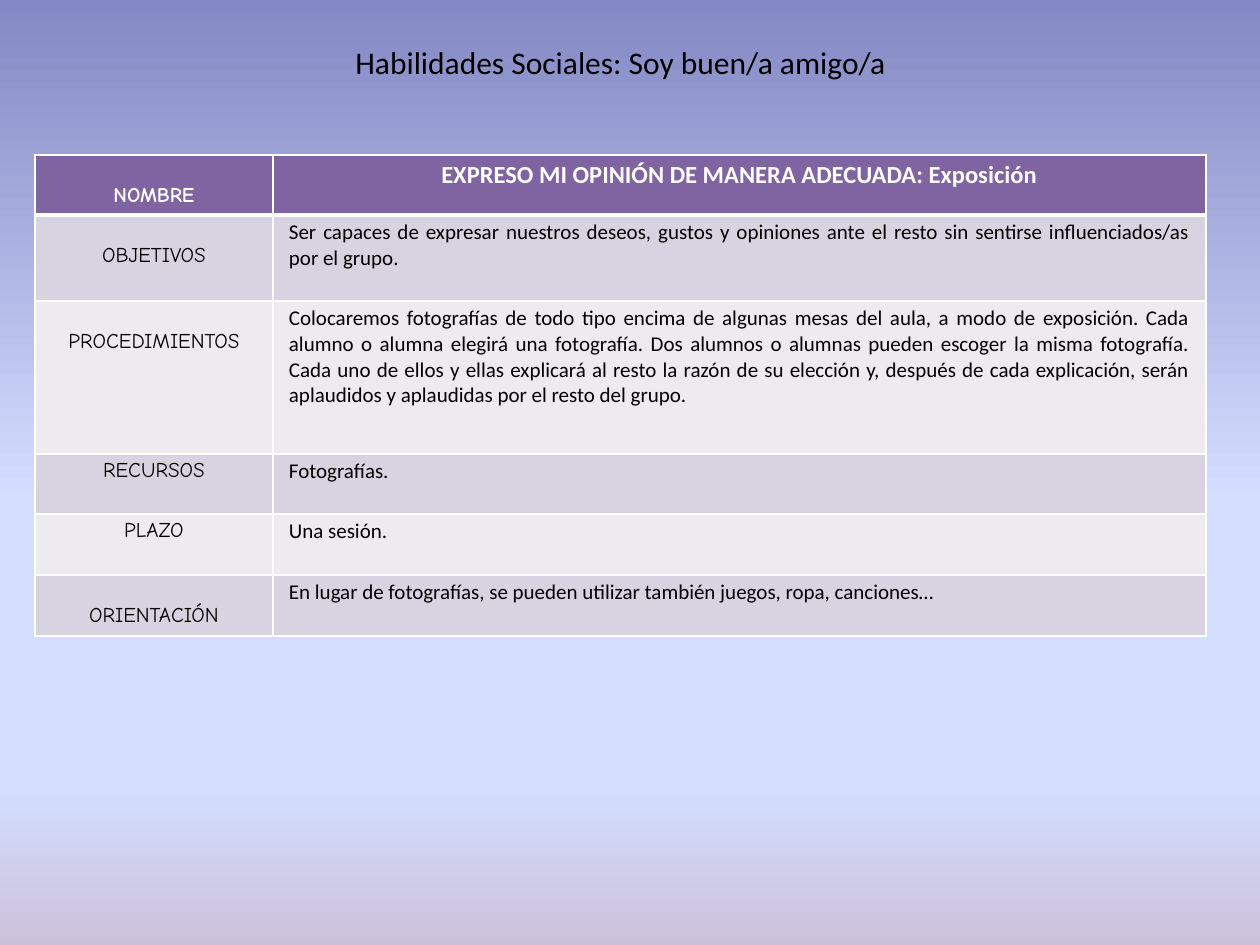
import pptx
import pptx.dml.color
import pptx.enum.text
import pptx.oxml
import pptx.oxml.ns
import pptx.util

PX = 914400 // 126
ALIGN = pptx.enum.text.PP_ALIGN

SKY_STOPS = [(0, "8488C4"), (53, "D4DEFF"), (83, "D4DEFF"), (100, "CCC1DA")]
HEADER_FILL = "8064A2"
BAND_FILLS = ["EDEAF0", "D8D3E0"]
COLUMN_WIDTHS = [238, 933]
CELL_SIDE, CELL_EDGE, LABEL_DROP = 16, 5, 24

# Row height, label, whether the label sits one line lower, description
ACTIVITY = [
    (60, "NOMBRE", True, "EXPRESO MI OPINIÓN DE MANERA ADECUADA: Exposición"),
    (86, "OBJETIVOS", True,
     "Ser capaces de expresar nuestros deseos, gustos y opiniones ante el resto "
     "sin sentirse influenciados/as por el grupo."),
    (153, "PROCEDIMIENTOS", True,
     "Colocaremos fotografías de todo tipo encima de algunas mesas del aula, a modo "
     "de exposición. Cada alumno o alumna elegirá una fotografía. Dos alumnos o "
     "alumnas pueden escoger la misma fotografía. Cada uno de ellos y ellas explicará "
     "al resto la razón de su elección y, después de cada explicación, serán "
     "aplaudidos y aplaudidas por el resto del grupo."),
    (60, "RECURSOS", False, "Fotografías."),
    (61, "PLAZO", False, "Una sesión."),
    (61, "ORIENTACIÓN", True,
     "En lugar de fotografías, se pueden utilizar también juegos, ropa, canciones…"),
]


def px(length):
    return pptx.util.Emu(length * PX)


def color(hex_code):
    return pptx.dml.color.RGBColor.from_string(hex_code)


def write(frame, text, font, size, ink="000000", bold=False, align=ALIGN.LEFT):
    frame.text = text
    paragraph = frame.paragraphs[0]
    paragraph.alignment = align
    style = paragraph.runs[0].font
    style.name, style.size, style.bold = font, pptx.util.Pt(size), bold
    style.color.rgb = color(ink)


def paint_sky(slide):
    """Vertical gradient with four stops behind the whole slide."""
    slide.background.fill.gradient()
    gradient = slide.background._cSld.find(".//" + pptx.oxml.ns.qn("a:gradFill"))
    for part in list(gradient):
        gradient.remove(part)
    stops = "".join(
        f'<a:gs pos="{place * 1000}"><a:srgbClr val="{code}"/></a:gs>'
        for place, code in SKY_STOPS)
    namespace = pptx.oxml.ns.nsdecls("a")
    gradient.append(pptx.oxml.parse_xml(f"<a:gsLst {namespace}>{stops}</a:gsLst>"))
    gradient.append(pptx.oxml.parse_xml(
        f'<a:lin {namespace} ang="5400000" scaled="0"/>'))


def add_title(slide, left, top, width, height):
    title = slide.shapes.add_textbox(px(left), px(top), px(width), px(height))
    title.text_frame.word_wrap = True
    write(title.text_frame, "Habilidades Sociales: Soy buen/a amigo/a", "Calibri", 18)


def add_borders(cell, top, bottom):
    """White rules on the four sides; widths in points."""
    properties = cell._tc.get_or_add_tcPr()
    for side, points in (("L", 1), ("R", 1), ("T", top), ("B", bottom)):
        properties.append(pptx.oxml.parse_xml(
            f'<a:ln{side} {pptx.oxml.ns.nsdecls("a")} w="{points * 12700}">'
            '<a:solidFill><a:srgbClr val="FFFFFF"/></a:solidFill>'
            f'</a:ln{side}>'))


def add_activity(slide, left, top):
    heights = [row[0] for row in ACTIVITY]
    activity = slide.shapes.add_table(
        len(ACTIVITY), len(COLUMN_WIDTHS), px(left), px(top),
        px(sum(COLUMN_WIDTHS)), px(sum(heights))).table
    for column, width in zip(activity.columns, COLUMN_WIDTHS):
        column.width = px(width)

    for index, (height, label, lowered, description) in enumerate(ACTIVITY):
        row = activity.rows[index]
        row.height = px(height)
        header = index == 0
        fill = HEADER_FILL if header else BAND_FILLS[index % 2]
        ink = "FFFFFF" if header else "000000"
        label_cell, description_cell = row.cells

        for cell in (label_cell, description_cell):
            add_borders(cell, 3 if index == 1 else 1, 3 if header else 1)
            cell.fill.solid()
            cell.fill.fore_color.rgb = color(fill)
            cell.margin_left = cell.margin_right = px(CELL_SIDE)
            cell.margin_top = cell.margin_bottom = px(CELL_EDGE)
        if lowered:
            label_cell.margin_top = px(CELL_EDGE + LABEL_DROP)

        write(label_cell.text_frame, label, "Comic Neue", 12, ink, header, ALIGN.CENTER)
        write(description_cell.text_frame, description, "Calibri",
              14 if header else 12, ink, header,
              ALIGN.CENTER if header else ALIGN.JUSTIFY)


def main():
    deck = pptx.Presentation()
    deck.slide_width, deck.slide_height = px(1260), px(945)
    slide = deck.slides.add_slide(deck.slide_layouts[6])
    paint_sky(slide)
    add_activity(slide, 35, 155)
    add_title(slide, 343, 37, 605, 50)
    deck.save("out.pptx")


if __name__ == "__main__":
    main()
